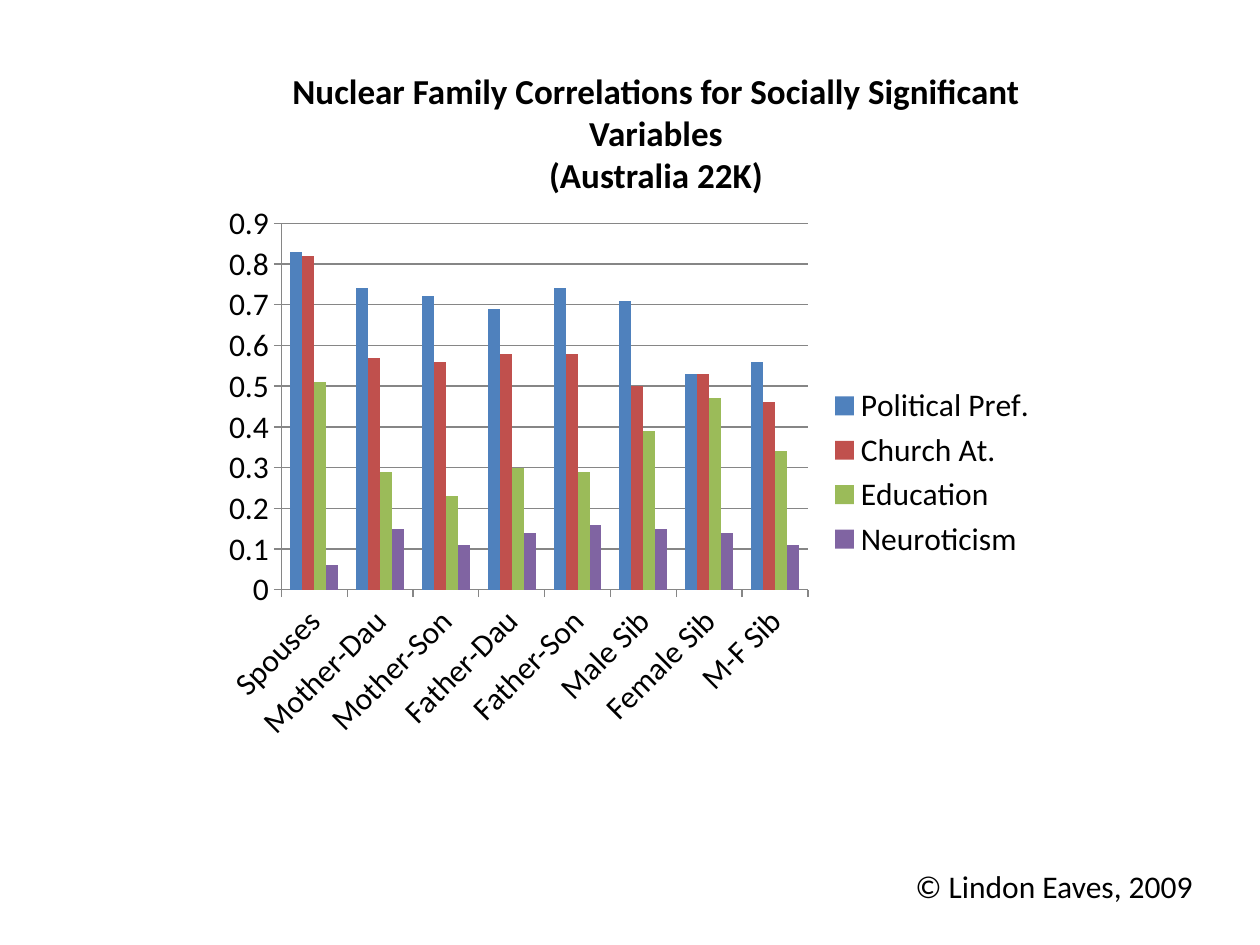
"""Build a slide charting nuclear family correlations."""
from dataclasses import dataclass

from pptx import Presentation
from pptx.chart.data import CategoryChartData
from pptx.dml.color import RGBColor
from pptx.enum.chart import XL_CHART_TYPE, XL_LEGEND_POSITION, XL_TICK_MARK
from pptx.enum.text import PP_ALIGN
from pptx.util import Emu, Pt

COLUMNS = XL_CHART_TYPE.COLUMN_CLUSTERED
LEGEND_RIGHT = XL_LEGEND_POSITION.RIGHT
TICK_OUTSIDE = XL_TICK_MARK.OUTSIDE
LEFT, CENTER = PP_ALIGN.LEFT, PP_ALIGN.CENTER
PX = 914400 // 126


@dataclass(frozen=True)
class Theme:
    font: str = "Calibri"
    text: str = "000000"
    line: str = "868686"
    blue: str = "4F81BD"
    red: str = "C0504D"
    green: str = "9BBB59"
    purple: str = "8064A2"
    title: int = 20
    body: int = 18


@dataclass(frozen=True)
class Box:
    x: int
    y: int
    w: int
    h: int

    def emu(self) -> tuple[Emu, ...]:
        return tuple(Emu(n * PX) for n in (self.x, self.y, self.w, self.h))


@dataclass(frozen=True)
class Series:
    name: str
    color: str
    values: tuple[float, ...]


THEME = Theme()
CATEGORIES = ("Spouses", "Mother-Dau", "Mother-Son", "Father-Dau",
              "Father-Son", "Male Sib", "Female Sib", "M-F Sib")
SERIES = (
    Series("Political Pref.", THEME.blue,
           (0.83, 0.74, 0.72, 0.69, 0.74, 0.71, 0.53, 0.56)),
    Series("Church At.", THEME.red,
           (0.82, 0.57, 0.56, 0.58, 0.58, 0.5, 0.53, 0.46)),
    Series("Education", THEME.green,
           (0.51, 0.29, 0.23, 0.3, 0.29, 0.39, 0.47, 0.34)),
    Series("Neuroticism", THEME.purple,
           (0.06, 0.15, 0.11, 0.14, 0.16, 0.15, 0.14, 0.11)),
)


def rgb(color: str) -> RGBColor:
    return RGBColor.from_string(color)


def style_font(font, size: int, bold: bool = False) -> None:
    font.name, font.size, font.bold = THEME.font, Pt(size), bold
    font.color.rgb = rgb(THEME.text)


def add_text(s, box: Box, *lines: str, size: int = THEME.body,
             bold: bool = False, align=LEFT, wrap: bool = False) -> None:
    tf = s.shapes.add_textbox(*box.emu()).text_frame
    tf.word_wrap = wrap
    for i, line in enumerate(lines):
        p = tf.add_paragraph() if i else tf.paragraphs[0]
        p.alignment = align
        r = p.add_run()
        r.text = line
        style_font(r.font, size, bold)


def style_line(line) -> None:
    line.color.rgb = rgb(THEME.line)
    line.width = Pt(0.75)


def add_columns(s, box: Box) -> None:
    data = CategoryChartData()
    data.categories = CATEGORIES
    for series in SERIES:
        data.add_series(series.name, series.values)
    chart = s.shapes.add_chart(COLUMNS, *box.emu(), data).chart
    chart.has_title = False
    style_font(chart.font, THEME.body)
    chart.has_legend = True
    chart.legend.position = LEGEND_RIGHT
    chart.legend.include_in_layout = False
    plot = chart.plots[0]
    plot.gap_width, plot.overlap, plot.vary_by_categories = 150, 0, False
    for series, drawn in zip(SERIES, plot.series):
        drawn.format.fill.solid()
        drawn.format.fill.fore_color.rgb = rgb(series.color)
    for axis in (chart.category_axis, chart.value_axis):
        axis.major_tick_mark = TICK_OUTSIDE
        style_line(axis.format.line)
    axis = chart.value_axis
    axis.minimum_scale, axis.maximum_scale, axis.major_unit = 0, 0.9, 0.1
    axis.has_major_gridlines = True
    style_line(axis.major_gridlines.format.line)


def main() -> None:
    prs = Presentation()
    prs.slide_width, prs.slide_height = Emu(1260 * PX), Emu(945 * PX)
    s = prs.slides.add_slide(prs.slide_layouts[6])
    add_columns(s, Box(210, 193, 840, 559))
    add_text(s, Box(212, 63, 888, 97),
             "Nuclear Family Correlations for Socially Significant Variables",
             "(Australia 22K)",
             size=THEME.title, bold=True, align=CENTER, wrap=True)
    add_text(s, Box(903, 861, 306, 50), "© Lindon Eaves, 2009")
    prs.save("out.pptx")


if __name__ == "__main__":
    main()
